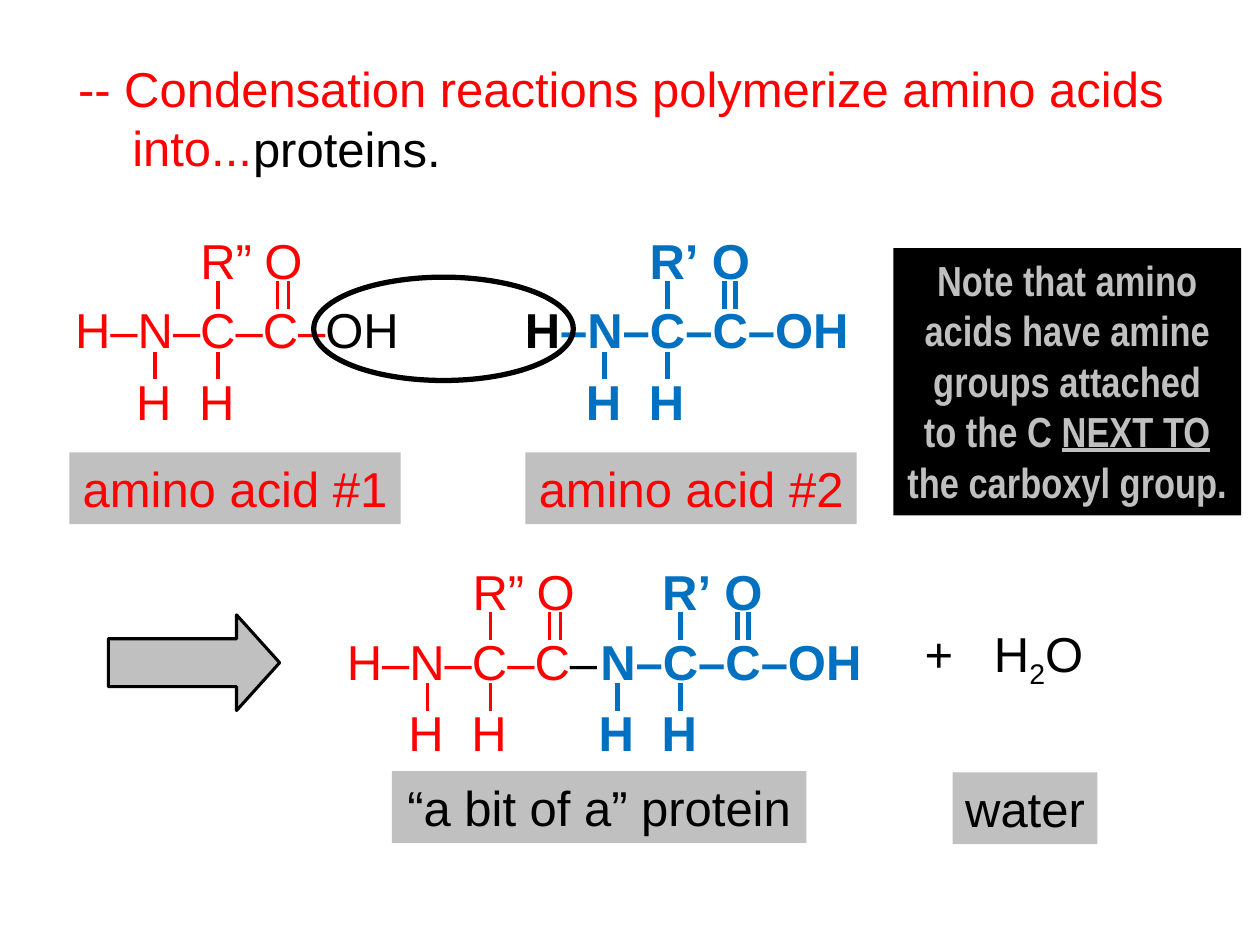
from lxml import etree
from pptx import Presentation
from pptx.dml.color import RGBColor
from pptx.enum.shapes import MSO_CONNECTOR, MSO_SHAPE
from pptx.enum.text import MSO_ANCHOR, MSO_AUTO_SIZE, PP_ALIGN
from pptx.oxml.ns import qn
from pptx.util import Inches, Pt

STRAIGHT = MSO_CONNECTOR.STRAIGHT
RECT, OVAL, ARROW = MSO_SHAPE.RECTANGLE, MSO_SHAPE.OVAL, MSO_SHAPE.RIGHT_ARROW
LEFT, CENTER = PP_ALIGN.LEFT, PP_ALIGN.CENTER
TOP, MIDDLE = MSO_ANCHOR.TOP, MSO_ANCHOR.MIDDLE
FIT = MSO_AUTO_SIZE.SHAPE_TO_FIT_TEXT

COLORS = {"red": "FF0000", "blue": "0070C0", "black": "000000", "gray": "C0C0C0"}
LINE_H = 0.57          # height of a one-line text box
CARBON_STEP = 0.5      # distance between neighbouring atoms of a chain
TOP_ROW, BOTTOM_ROW = 2.33, 4.96   # tops of the two chain rows


def color(name):
    return RGBColor.from_string(COLORS[name])


def box(left, top, width, height=LINE_H):
    return [Inches(v) for v in (left, top, width, height)]


def add_run(paragraph, text, ink, size=28, font="Arial", bold=False, underline=False):
    run = paragraph.add_run()
    run.text = text
    run.font.name, run.font.size = font, Pt(size)
    run.font.bold, run.font.underline = bold, underline
    run.font.color.rgb = color(ink)
    return run


def write(shape, lines, align=CENTER, anchor=TOP, **style):
    """Each line is a list of (text, ink) or (text, ink, underline) runs."""
    frame = shape.text_frame
    frame.word_wrap, frame.auto_size = False, FIT
    frame.vertical_anchor = anchor
    for i, runs in enumerate(lines):
        paragraph = frame.add_paragraph() if i else frame.paragraphs[0]
        paragraph.alignment = align
        for text, ink, *underline in runs:
            add_run(paragraph, text, ink, underline=bool(underline), **style)
    return frame


def add_text(shapes, place, runs, align=CENTER, **style):
    return write(shapes.add_textbox(*box(*place)), [runs], align, **style)


def add_figure(shapes, preset, place, fill=None, line=None, weight=0):
    figure = shapes.add_shape(preset, *box(*place))
    figure.shadow.inherit = False
    if fill:
        figure.fill.solid()
        figure.fill.fore_color.rgb = color(fill)
    else:
        figure.fill.background()
    if line:
        figure.line.color.rgb = color(line)
        figure.line.width = Pt(weight)
    else:
        figure.line.fill.background()
    return figure


def add_label(shapes, place, text, ink):
    write(add_figure(shapes, RECT, place, fill="gray"), [[(text, ink)]])


def add_bond(shapes, x, top, ink, weight):
    bond = shapes.add_connector(STRAIGHT, *[Inches(v) for v in (x, top + 0.22, x, top)])
    bond.line.color.rgb = color(ink)
    bond.line.width = Pt(weight)
    etree.SubElement(bond._element.spPr, qn("a:effectLst"))


def add_residue(shapes, alpha, row, ink, side_chain, chain, chain_start, chain_width):
    """Draw an amino acid around its alpha carbon, the x position of which is alpha."""
    bold = ink == "blue"
    weight, shift = (2.75, -0.02) if bold else (1.75, 0)
    add_text(shapes, (alpha + chain_start, row, chain_width), chain, bold=bold)
    # Side chain and double-bonded oxygen above
    for offset in (0, 0.47 + shift, 0.56 + shift):
        add_bond(shapes, alpha + offset, row - 0.1, ink, weight)
    add_text(shapes, (alpha - 0.25, row - 0.55, 0.6 if bold else 0.63),
             [(side_chain, ink)], bold=bold)
    add_text(shapes, (alpha + 0.27 + shift, row - 0.55, 0.5), [("O", ink)], bold=bold)
    # Hydrogens below the alpha carbon and the nitrogen
    for atom_x in (alpha, alpha - CARBON_STEP):
        add_bond(shapes, atom_x, row + 0.46, ink, weight)
        add_text(shapes, (atom_x - 0.25, row + 0.57, 0.48), [("H", ink)], bold=bold)


def add_heading(slide):
    title = slide.shapes.title
    title.left, title.top, title.width, title.height = box(0.52, 0.41, 8.93, 1.04)
    frame = write(title, [[("-- Condensation reactions polymerize amino acids", "red")],
                          [("into...", "red")]], LEFT, MIDDLE)
    indent = frame.paragraphs[1]._p.get_or_add_pPr()
    indent.set("marL", str(Inches(0.43)))
    indent.set("indent", "0")
    add_text(slide.shapes, (1.91, 0.89, 1.71), [("proteins.", "black")], LEFT)


def add_water(shapes):
    frame = add_text(shapes, (7.24, 4.9, 1.48),
                     [("+\tH", "black"), ("2", "black"), ("O", "black")], LEFT)
    paragraph = frame.paragraphs[0]
    paragraph.runs[1].font._element.set("baseline", "-25000")
    tabs = etree.SubElement(paragraph._p.get_or_add_pPr(), qn("a:tabLst"))
    etree.SubElement(tabs, qn("a:tab"), pos=str(Inches(0.55)), algn="l")
    add_label(shapes, (7.56, 6.13, 1.15), "water", "black")


def add_note(shapes):
    note = add_figure(shapes, RECT, (7.09, 1.97, 2.76, 2.12), fill="black")
    write(note, [[("Note that amino", "gray")],
                 [("acids have amine", "gray")],
                 [("groups attached", "gray")],
                 [("to the C ", "gray"), ("NEXT TO", "gray", True)],
                 [("the carboxyl group.", "gray")]],
          size=24, font="Arial Narrow", bold=True)


def main():
    prs = Presentation()
    prs.slide_width, prs.slide_height = Inches(10), Inches(7.5)
    slide = prs.slides.add_slide(prs.slide_layouts[5])
    shapes = slide.shapes
    add_heading(slide)

    # Reacting amino acids
    first = shapes.add_group_shape().shapes
    add_residue(first, 1.73, TOP_ROW, "red", "R”",
                [("H–N–C–C–", "red"), ("OH", "black")], -1.24, 2.78)
    add_label(first, (0.55, 3.59, 2.63), "amino acid #1", "red")
    second = shapes.add_group_shape().shapes
    add_residue(second, 5.3, TOP_ROW, "blue", "R’",
                [("H", "black"), ("–N–C–C–OH", "blue")], -1.24, 2.78)
    add_label(second, (4.17, 3.59, 2.63), "amino acid #2", "red")

    # Products
    protein = shapes.add_group_shape().shapes
    add_residue(protein, 3.89, BOTTOM_ROW, "red", "R”",
                [("H–N–C–C", "red"), ("–", "black")], -1.24, 2.19)
    add_residue(protein, 5.4, BOTTOM_ROW, "blue", "R’",
                [("N–C–C–OH", "blue")], -0.74, 2.28)
    add_label(protein, (3.11, 6.12, 3.29), "“a bit of a” protein", "black")
    arrow = add_figure(shapes, ARROW, (0.86, 4.88, 1.36, 0.76), "gray", "black", 1.75)
    arrow.adjustments[0], arrow.adjustments[1] = 0.5, 0.45
    add_water(shapes.add_group_shape().shapes)

    # Note and the ring around the atoms that leave as water
    add_note(shapes)
    add_figure(shapes, OVAL, (2.49, 2.2, 2.06, 0.82), line="black", weight=3)
    prs.save("out.pptx")


if __name__ == "__main__":
    main()
